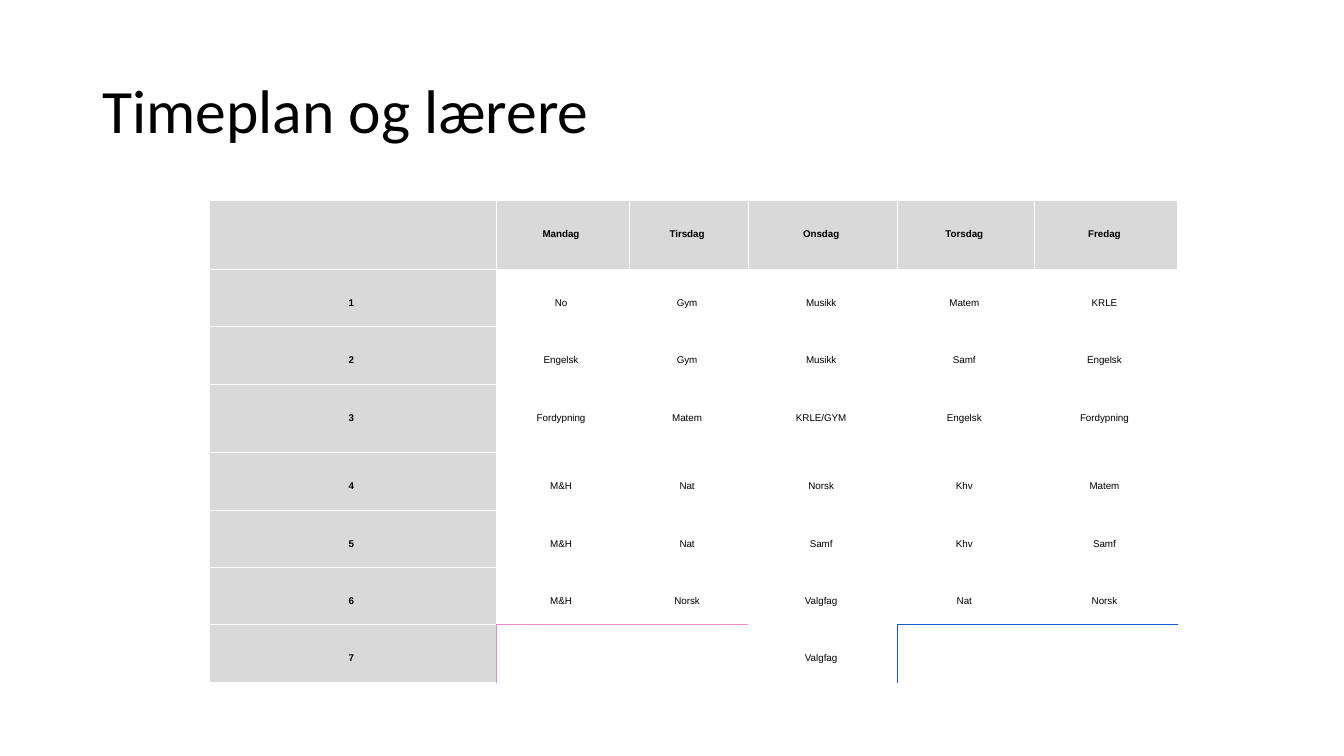
"""Build a slide with a weekly school timetable."""
from dataclasses import dataclass

from lxml import etree
from pptx import Presentation
from pptx.dml.color import RGBColor
from pptx.enum.text import MSO_ANCHOR, PP_ALIGN
from pptx.oxml.ns import qn
from pptx.util import Emu, Pt

MIDDLE = MSO_ANCHOR.MIDDLE
TOP = MSO_ANCHOR.TOP
LEFT = PP_ALIGN.LEFT
CENTER = PP_ALIGN.CENTER

SCALE = 9144
BLACK, WHITE, GREY = "000000", "FFFFFF", "D9D9D9"
RULE = 6350

WIDTHS = [284, 132, 118, 148, 136, 142]
HEIGHTS = [68, 57, 57, 68, 57, 57, 57, 57]
PLAN = [
    ["", "Mandag", "Tirsdag", "Onsdag", "Torsdag", "Fredag"],
    ["1", "No", "Gym", "Musikk", "Matem", "KRLE"],
    ["2", "Engelsk", "Gym", "Musikk", "Samf", "Engelsk"],
    ["3", "Fordypning", "Matem", "KRLE/GYM", "Engelsk", "Fordypning"],
    ["4", "M&H", "Nat", "Norsk", "Khv", "Matem"],
    ["5", "M&H", "Nat", "Samf", "Khv", "Samf"],
    ["6", "M&H", "Norsk", "Valgfag", "Nat", "Norsk"],
    ["7", "", "", "Valgfag", "", ""],
]
LAST = len(PLAN) - 1


@dataclass(frozen=True)
class Gap:
    col: int
    tint: str


GAPS = [Gap(1, "F085D4"), Gap(4, "105CD4")]


def px(size: int) -> Emu:
    return Emu(size * SCALE)


def color(code: str) -> RGBColor:
    return RGBColor.from_string(code)


def write(frame, text: str, *, size: int, font: str, bold: bool = False,
          align=LEFT, space: float = 1.0) -> None:
    line = frame.paragraphs[0]
    line.alignment = align
    line.line_spacing = space
    run = line.add_run()
    run.text = text
    run.font.size = Pt(size)
    run.font.name = font
    run.font.bold = bold
    run.font.color.rgb = color(BLACK)


def edges(row: int, col: int) -> dict[str, str]:
    tints = dict.fromkeys(("lnL", "lnR", "lnT", "lnB"), WHITE)
    for gap in GAPS:
        inside = col in (gap.col, gap.col + 1)
        if row == LAST - 1 and inside:
            tints["lnB"] = gap.tint
        if row == LAST and inside:
            tints["lnT"] = gap.tint
        if row == LAST and col == gap.col:
            tints["lnL"] = gap.tint
        if row == LAST and col == gap.col - 1:
            tints["lnR"] = gap.tint
    return tints


def border(cell, tints: dict[str, str]) -> None:
    props = cell._tc.get_or_add_tcPr()
    for spot, (side, tint) in enumerate(tints.items()):
        line = etree.Element(qn(f"a:{side}"), w=str(RULE))
        fill = etree.SubElement(line, qn("a:solidFill"))
        etree.SubElement(fill, qn("a:srgbClr"), val=tint)
        props.insert(spot, line)


def style(cell, row: int, col: int) -> None:
    head = row == 0 or col == 0
    if head:
        cell.fill.solid()
        cell.fill.fore_color.rgb = color(GREY)
    else:
        cell.fill.background()
    cell.vertical_anchor = TOP
    cell.margin_left, cell.margin_right = px(8), px(11)
    cell.margin_top, cell.margin_bottom = px(28), px(4)
    if PLAN[row][col]:
        write(cell.text_frame, PLAN[row][col], size=7, font="Arial",
              bold=head, align=CENTER)
    else:
        cell.margin_top = px(4)
    border(cell, edges(row, col))


def title(slide) -> None:
    box = slide.shapes.add_textbox(px(92), px(40), px(1150), px(145))
    frame = box.text_frame
    frame.word_wrap = True
    frame.vertical_anchor = MIDDLE
    write(frame, "Timeplan og lærere", size=44, font="Calibri", space=0.9)


def table(slide) -> None:
    grid = slide.shapes.add_table(
        len(PLAN), len(WIDTHS), px(208), px(199),
        px(sum(WIDTHS)), px(sum(HEIGHTS))).table
    grid.first_row = False
    grid.horz_banding = False
    for col, width in zip(grid.columns, WIDTHS):
        col.width = px(width)
    for row, height in zip(grid.rows, HEIGHTS):
        row.height = px(height)
    for row, names in enumerate(PLAN):
        for col in range(len(names)):
            style(grid.cell(row, col), row, col)
    for gap in GAPS:
        grid.cell(LAST, gap.col).merge(grid.cell(LAST, gap.col + 1))


def main() -> None:
    deck = Presentation()
    deck.slide_width, deck.slide_height = px(1333), px(750)
    slide = deck.slides.add_slide(deck.slide_layouts[6])
    title(slide)
    table(slide)
    deck.save("out.pptx")


if __name__ == "__main__":
    main()
